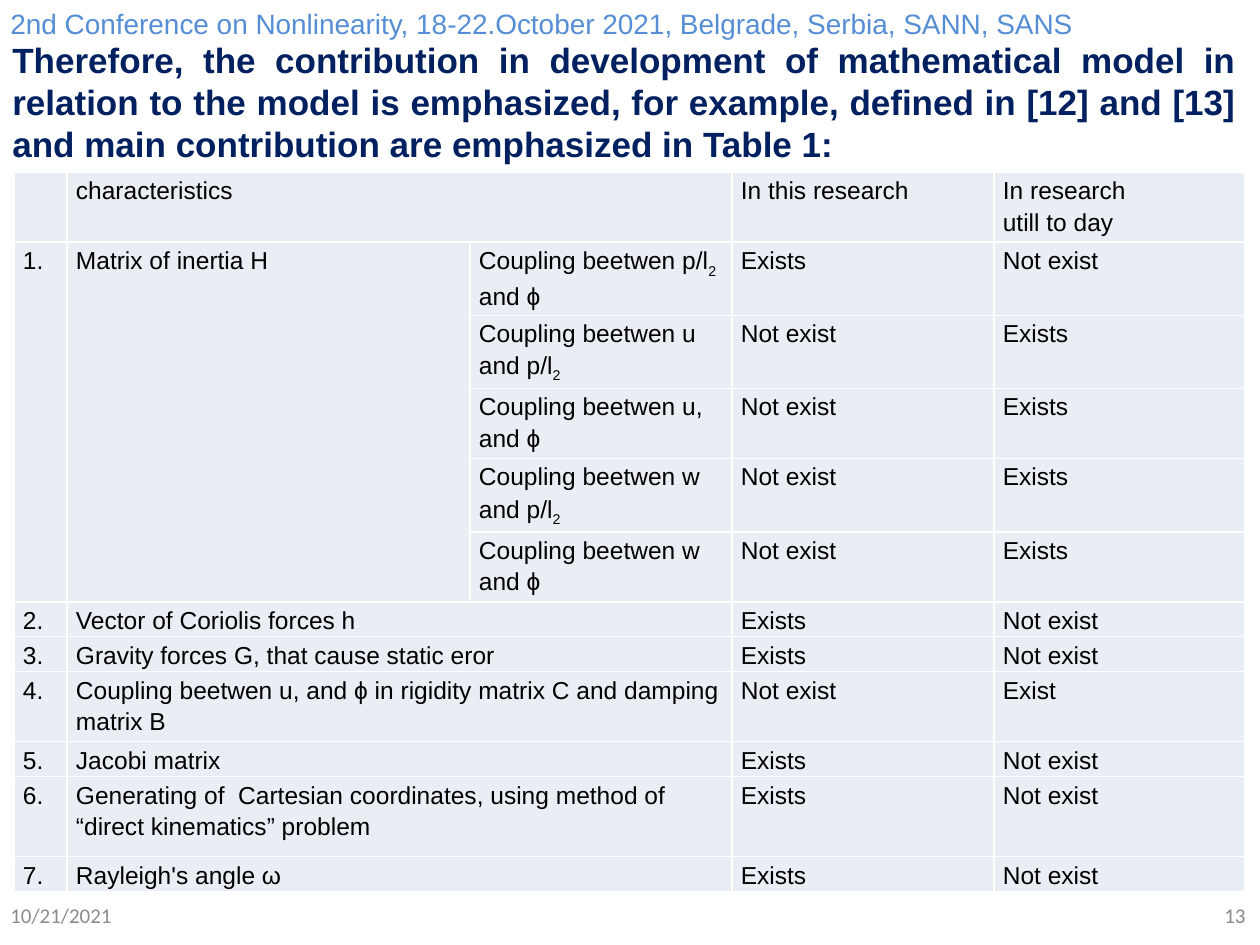
from dataclasses import dataclass
from itertools import product

from lxml.etree import SubElement
from pptx import Presentation
from pptx.dml.color import RGBColor
from pptx.enum.text import MSO_ANCHOR, PP_ALIGN
from pptx.oxml.ns import qn
from pptx.slide import Slide
from pptx.util import Pt

EMU_PER_PX = 914400 // 126
COLOURS = {
    "conference": "558ED5",
    "heading": "002060",
    "body": "000000",
    "cell": "E9EDF4",
    "border": "FFFFFF",
    "page": "898989",
    "date": "8C8C8C",
}
FONTS = {
    "conference": {"name": "Arial", "size": Pt(16)},
    "heading": {"name": "Arial", "size": Pt(20), "bold": True},
    "body": {"name": "Arial", "size": Pt(14), "bold": False},
    "page": {"name": "Calibri", "size": Pt(12)},
    "date": {"name": "Calibri", "size": Pt(12)},
}
CELL_MARGINS = {"margin_left": 9, "margin_right": 9, "margin_top": 1, "margin_bottom": 0}

CONFERENCE = "2nd Conference on Nonlinearity, 18-22.October 2021, Belgrade, Serbia, SANN, SANS"
HEADING = (
    "Therefore, the contribution in development of mathematical model in relation "
    "to the model is emphasized, for example, defined in [12] and [13] and main "
    "contribution are emphasized in Table 1:"
)

COLUMN_WIDTHS = [53, 403, 262, 262, 251]
ROW_HEIGHTS = [70] * 6 + [35, 35, 70, 35, 80, 35]
YES, NO = "Exists", "Not exist"
# Text between bars is set as subscript.
ROWS = [
    ["", "characteristics", "", "In this research", "In research\nutill to day"],
    ["1.", "Matrix of inertia H", "Coupling beetwen p/l|2 |and ϕ", YES, NO],
    ["", "", "Coupling beetwen u and p/l|2|", NO, YES],
    ["", "", "Coupling beetwen u, and ϕ", NO, YES],
    ["", "", "Coupling beetwen w and p/l|2|", NO, YES],
    ["", "", "Coupling beetwen w and ϕ", NO, YES],
    ["2.", "Vector of Coriolis forces h", "", YES, NO],
    ["3.", "Gravity forces G, that cause static eror", "", YES, NO],
    ["4.", "Coupling beetwen u, and ϕ in rigidity matrix C and damping matrix B", "", NO, "Exist"],
    ["5.", "Jacobi matrix", "", YES, NO],
    ["6.", "Generating of  Cartesian coordinates, using method of “direct kinematics” problem",
     "", YES, NO],
    ["7.", "Rayleigh's angle ω", "", YES, NO],
]
INERTIA_ROWS = range(1, 6)
MERGES = [((1, column), (5, column)) for column in (0, 1)] + [
    ((row, 1), (row, 2)) for row in range(len(ROWS)) if row not in INERTIA_ROWS
]


def px(length):
    return length * EMU_PER_PX


def apply_format(target, values):
    for name, value in values.items():
        setattr(target, name, value)


@dataclass
class SlideBuilder:
    slide: Slide
    colours: dict
    fonts: dict

    def fill_text(self, frame, content, role, **paragraph_format):
        """Fill a text frame: newlines part paragraphs, bars enclose subscripts."""
        for index, line in enumerate(content.split("\n")):
            paragraph = frame.add_paragraph() if index else frame.paragraphs[0]
            apply_format(paragraph, paragraph_format)
            for part, piece in enumerate(line.split("|")):
                if not piece:
                    continue
                run = paragraph.add_run()
                run.text = piece
                apply_format(run.font, self.fonts[role])
                run.font.color.rgb = RGBColor.from_string(self.colours[role])
                if part % 2:
                    run.font._element.set("baseline", "-25000")

    def text(self, box, content, role, anchor=MSO_ANCHOR.MIDDLE, align=PP_ALIGN.LEFT):
        frame = self.slide.shapes.add_textbox(*map(px, box)).text_frame
        apply_format(frame, {"word_wrap": True, "vertical_anchor": anchor})
        self.fill_text(frame, content, role, alignment=align)

    def style_cell(self, cell):
        apply_format(cell, {name: px(margin) for name, margin in CELL_MARGINS.items()})
        properties = cell._tc.get_or_add_tcPr()
        for side in ("lnL", "lnR", "lnT", "lnB"):
            border = SubElement(properties, qn(f"a:{side}"), w=str(Pt(1)))
            fill = SubElement(border, qn("a:solidFill"))
            SubElement(fill, qn("a:srgbClr"), val=self.colours["border"])
        cell.fill.solid()
        cell.fill.fore_color.rgb = RGBColor.from_string(self.colours["cell"])

    def table(self, left, top, widths, heights, rows, merges):
        box = (left, top, sum(widths), sum(heights))
        table = self.slide.shapes.add_table(len(heights), len(widths), *map(px, box)).table
        apply_format(table, {"first_row": False, "horz_banding": False})
        for column, width in zip(table.columns, widths):
            column.width = px(width)
        for row, height in zip(table.rows, heights):
            row.height = px(height)
        for first, last in merges:
            table.cell(*first).merge(table.cell(*last))
        for row, column in product(range(len(heights)), range(len(widths))):
            cell = table.cell(row, column)
            self.style_cell(cell)
            self.fill_text(cell.text_frame, rows[row][column], "body", line_spacing=1.15)


def main():
    presentation = Presentation()
    apply_format(presentation, {"slide_width": px(1260), "slide_height": px(945)})
    slide = presentation.slides.add_slide(presentation.slide_layouts[6])
    builder = SlideBuilder(slide, COLOURS, FONTS)

    builder.text((880, 890, 378, 50), "13", "page", align=PP_ALIGN.RIGHT)
    builder.text((-2, 890, 378, 50), "10/21/2021", "date")
    builder.text((-2, 0, 1099, 47), CONFERENCE, "conference", anchor=MSO_ANCHOR.TOP)
    builder.text((0, 32, 1249, 140), HEADING, "heading", align=PP_ALIGN.JUSTIFY)
    builder.table(14, 172, COLUMN_WIDTHS, ROW_HEIGHTS, ROWS, MERGES)

    presentation.save("out.pptx")


if __name__ == "__main__":
    main()
